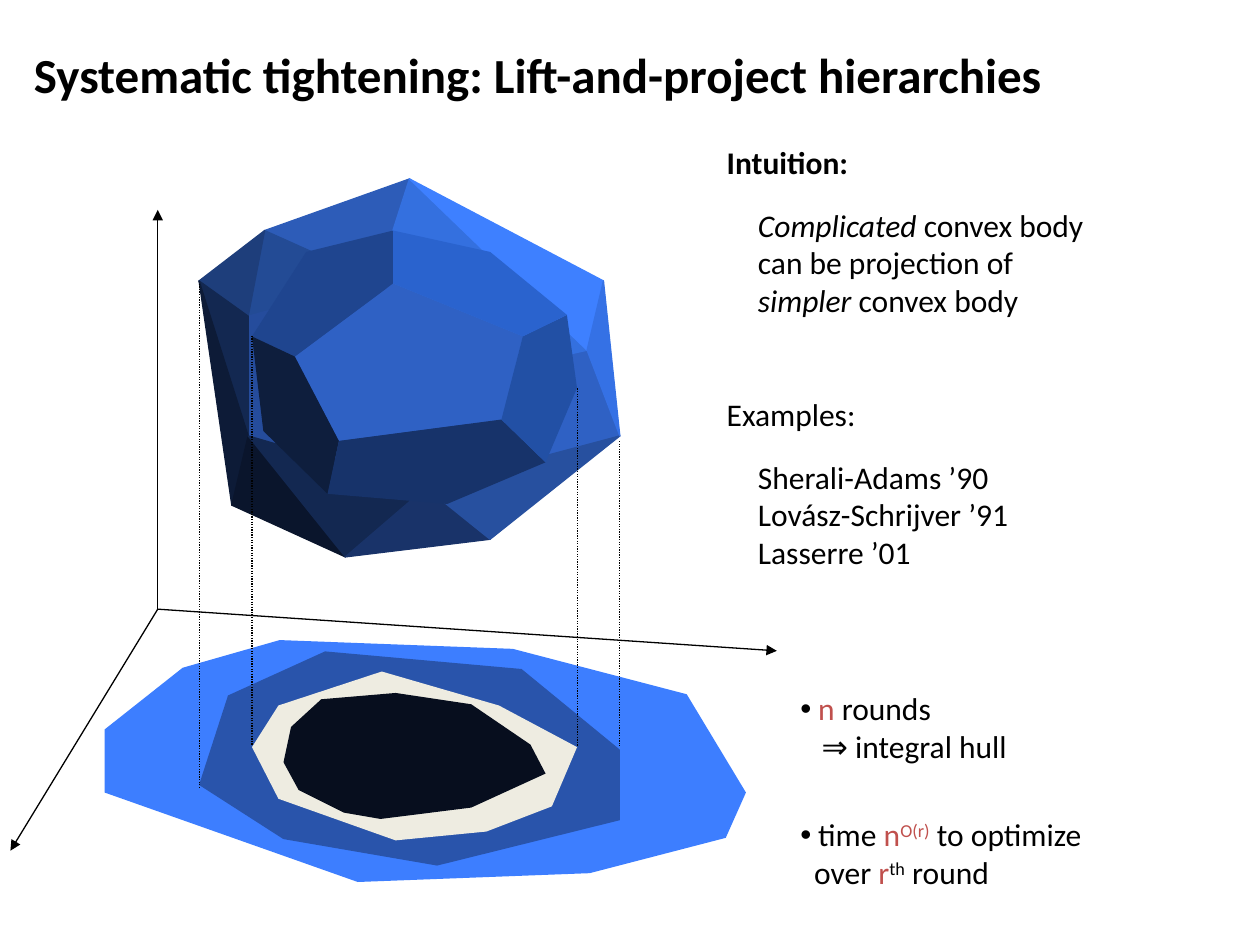
import pptx
import pptx.dml.color
import pptx.enum.dml
import pptx.enum.shapes
import pptx.enum.text
import pptx.oxml
import pptx.oxml.ns
import pptx.util
from lxml import etree

Cm = pptx.util.Cm
Pt = pptx.util.Pt
RGBColor = pptx.dml.color.RGBColor
qn = pptx.oxml.ns.qn

BLACK = RGBColor(0x00, 0x00, 0x00)
RED = RGBColor(0xC0, 0x50, 0x4D)
OUTER_BLUE = RGBColor(0x3D, 0x7E, 0xFF)
SHADOW_BLUE = RGBColor(0x29, 0x54, 0xAB)
CREAM = RGBColor(0xEE, 0xEC, 0xE1)
NAVY = RGBColor(0x07, 0x0E, 0x1E)
GRID = Cm(2.54) / 100  # polygon corners are counted in this step


def add_polygon(shapes, corners, color, outlined=False):
    builder = shapes.build_freeform(*corners[0], scale=GRID)
    builder.add_line_segments(corners[1:], close=True)
    shape = builder.convert_to_shape()
    shape.shadow.inherit = False
    shape.fill.solid()
    shape.fill.fore_color.rgb = color
    if outlined:
        shape.line.color.rgb = color
        shape.line.width = Pt(0.75)
    else:
        shape.line.fill.background()


def add_run(paragraph, text, style="", size=18):
    """Style letters: b bold, i italic, r red, s superscript."""
    run = paragraph.add_run()
    run.text = text
    run.font.name = "Calibri"
    run.font.size = Pt(size)
    run.font.bold = "b" in style
    run.font.italic = "i" in style
    run.font.color.rgb = RED if "r" in style else BLACK
    if "s" in style:
        run._r.get_or_add_rPr().set("baseline", "30000")


presentation = pptx.Presentation()
presentation.slide_width = Cm(25.4)
presentation.slide_height = Cm(19.05)
slide = presentation.slides.add_slide(presentation.slide_layouts[3])

# Title
title = slide.shapes.title
title.left, title.top, title.width, title.height = Cm(0.43), Cm(0.43), Cm(24.33), Cm(2.11)
title.text_frame.vertical_anchor = pptx.enum.text.MSO_ANCHOR.MIDDLE
title_paragraph = title.text_frame.paragraphs[0]
title_paragraph.alignment = pptx.enum.text.PP_ALIGN.LEFT
add_run(title_paragraph, "Systematic tightening: Lift-and-project hierarchies", "b", 28)

# Lifted bodies: named corners, then faces from back to front
outer_corners = {
    "A": (210, 183), "B": (325, 142), "C": (299, 223), "D": (197, 251), "E": (402, 292),
    "F": (338, 387), "G": (197, 346), "H": (158, 223), "I": (184, 401), "J": (274, 442),
    "K": (389, 428), "L": (492, 346), "M": (466, 278), "N": (479, 223),
}
outer_faces = [
    ("ABC", "2D5CB8"), ("ADC", "234B95"), ("CEFGD", "254C9C"), ("DAH", "1E3E7B"),
    ("DGH", "132851"), ("GIH", "0D1B37"), ("IJG", "0A152C"), ("JGF", "132851"),
    ("JKF", "193369"), ("FLME", "2F61C4"), ("KLF", "27509F"), ("BMEC", "3470DF"),
    ("BNM", "3E80FF"), ("NLM", "3571E5"),
]
inner_corners = {
    "A": (312, 225), "B": (234, 283), "C": (269, 350), "D": (398, 333), "E": (415, 267),
    "F": (312, 183), "G": (243, 200), "H": (200, 267), "I": (260, 392), "J": (209, 342),
    "K": (355, 400), "L": (433, 367), "M": (450, 250), "N": (458, 308), "O": (389, 200),
}
inner_faces = [
    ("ABCDE", "2F61C4"), ("AFGHB", "1F458F"), ("CIJHB", "0E1E3D"),
    ("IKLDC", "17336A"), ("DEMNL", "2250A5"), ("AFOME", "2A63CE"),
]
for corners, faces, outlined in (
    (outer_corners, outer_faces, True),
    (inner_corners, inner_faces, False),
):
    body_group = slide.shapes.add_group_shape()
    for names, color in faces:
        add_polygon(body_group.shapes, [corners[name] for name in names],
                    RGBColor.from_string(color), outlined)

# Projections on the floor, from the loosest to the tightest
projections = [
    ([(145, 530), (83, 579), (83, 629), (284, 700), (468, 693), (576, 665),
      (592, 629), (545, 551), (407, 515), (222, 508)], OUTER_BLUE),
    ([(181, 552), (158, 623), (225, 666), (347, 687), (492, 651), (492, 595),
      (414, 531), (258, 517)], SHADOW_BLUE),
    ([(303, 533), (221, 560), (200, 593), (221, 634), (314, 667), (386, 660),
      (438, 640), (458, 593), (396, 560)], CREAM),
    ([(255, 555), (231, 577), (225, 605), (237, 627), (273, 645), (302, 650),
      (374, 641), (433, 614), (421, 591), (374, 559), (314, 550)], NAVY),
]
for corners, color in projections:
    add_polygon(slide.shapes, corners, color)

# Axes with arrowheads, and dotted projection lines
origin = (3.18, 12.28)
lines = [(*origin, x, y, True) for x, y in ((3.18, 4.23), (15.66, 13.12), (0.21, 17.15))]
lines += [
    (x, top, x, bottom, False)
    for x, top, bottom in (
        (4.02, 5.72, 15.88), (12.49, 8.89, 15.03), (11.64, 7.83, 15.03), (5.08, 6.77, 15.03),
    )
]
for x1, y1, x2, y2, is_axis in lines:
    connector = slide.shapes.add_connector(
        pptx.enum.shapes.MSO_CONNECTOR.STRAIGHT, Cm(x1), Cm(y1), Cm(x2), Cm(y2))
    connector.line.color.rgb = BLACK
    connector.line.width = Pt(0.75)
    if is_axis:
        etree.SubElement(connector.line._get_or_add_ln(), qn("a:tailEnd"), type="triangle")
    else:
        connector.line.dash_style = pptx.enum.dml.MSO_LINE.ROUND_DOT
    etree.SubElement(connector._element.spPr, qn("a:effectLst"))

# Text boxes: left, top, width, height, paragraphs of (text, style) runs
text_boxes = [
    (14.4, 2.75, 4.14, 1.27, [[("Intuition:", "b")]]),
    (15.03, 4.02, 10.3, 3.3, [
        [("Complicated", "i"), (" convex body", "")],
        [("can be projection of", "")],
        [("simpler", "i"), (" convex body", "")],
    ]),
    (14.4, 7.83, 4.47, 1.27, [[("Examples:", "")]]),
    (15.03, 9.1, 8.13, 3.3, [
        [("Sherali-Adams ’90", "")],
        [("Lovász-Schrijver ’91", "")],
        [("Lasserre ’01", "")],
    ]),
]
for left, top, width, height, paragraphs in text_boxes:
    text_box = slide.shapes.add_textbox(Cm(left), Cm(top), Cm(width), Cm(height))
    frame = text_box.text_frame
    frame.word_wrap = True
    for index, runs in enumerate(paragraphs):
        paragraph = frame.add_paragraph() if index else frame.paragraphs[0]
        for text, style in runs:
            add_run(paragraph, text, style)

# Bullets: each has a bulleted line and an indented second line
bullets = [
    (1, 13.77, 6.63, 0.43,
     [("n", "r"), (" rounds", "")],
     [("⇒ integral hull", "")]),
    (2, 16.31, 8.92, 0.28,
     [("time ", ""), ("n", "r"), ("O(r)", "rs"), (" to optimize", "")],
     [("over ", ""), ("r", "r"), ("th", "s"), (" round", "")]),
]
for placeholder_index, top, width, second_indent, first_runs, second_runs in bullets:
    body = slide.placeholders[placeholder_index]
    body.left, body.top, body.width, body.height = Cm(15.88), Cm(top), Cm(width), Cm(2.29)
    frame = body.text_frame
    frame.auto_size = pptx.enum.text.MSO_AUTO_SIZE.NONE
    for paragraph, runs, margin, hanging in (
        (frame.paragraphs[0], first_runs, 0.36, 0.36),
        (frame.add_paragraph(), second_runs, second_indent, 0),
    ):
        paragraph.space_before = Pt(0)
        properties = paragraph._p.get_or_add_pPr()
        properties.set("marL", str(Cm(margin)))
        properties.set("indent", str(-Cm(hanging)))
        if hanging:
            bullet_color = etree.SubElement(properties, qn("a:buClr"))
            etree.SubElement(bullet_color, qn("a:srgbClr"), val=str(BLACK))
            etree.SubElement(properties, qn("a:buChar"), char="•")
        else:
            etree.SubElement(properties, qn("a:buNone"))
        for text, style in runs:
            add_run(paragraph, text, style)

presentation.save("out.pptx")
